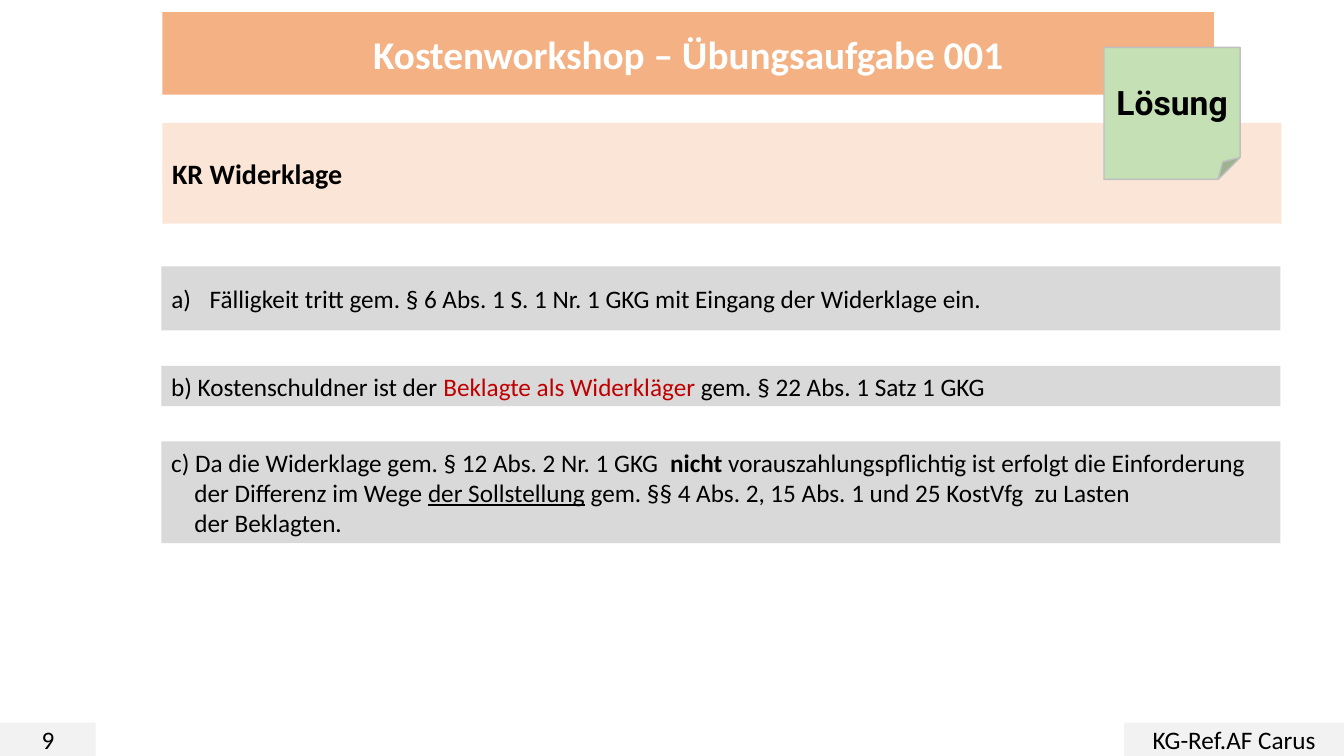
import pptx
import pptx.util
import pptx.dml.color
import pptx.enum.shapes
import pptx.enum.text
import pptx.oxml
import pptx.oxml.ns

Inches = pptx.util.Inches
RGBColor = pptx.dml.color.RGBColor
Shape = pptx.enum.shapes.MSO_SHAPE
Align = pptx.enum.text.PP_ALIGN
Anchor = pptx.enum.text.MSO_ANCHOR
AutoSize = pptx.enum.text.MSO_AUTO_SIZE

BLACK = RGBColor(0x00, 0x00, 0x00)
WHITE = RGBColor(0xFF, 0xFF, 0xFF)
RED = RGBColor(0xC0, 0x00, 0x00)
ORANGE = RGBColor(0xF4, 0xB1, 0x83)
PEACH = RGBColor(0xFB, 0xE5, 0xD6)
GREEN = RGBColor(0xC5, 0xE0, 0xB4)
GREY = RGBColor(0xD9, 0xD9, 0xD9)
PALE_GREY = RGBColor(0xF2, 0xF2, 0xF2)
LINE_GREY = RGBColor(0xBF, 0xBF, 0xBF)


def drawing_element(tag, **attributes):
    element = pptx.oxml.parse_xml(f"<a:{tag} {pptx.oxml.ns.nsdecls('a')}/>")
    for name, value in attributes.items():
        element.set(name, str(value))
    return element


class SlideBuilder:
    """Holds the text style and the slide being filled."""

    style = {"name": "Calibri", "size": 18, "bold": False, "color": BLACK}

    def __init__(self, slide):
        self.slide = slide

    def fill_text(self, box, paragraphs, align=Align.LEFT, grow=False, **formats):
        """Each paragraph is a list of (text, format changes) spans."""
        frame = box.text_frame
        settings = {
            "word_wrap": True,
            "vertical_anchor": Anchor.MIDDLE,
            "auto_size": AutoSize.SHAPE_TO_FIT_TEXT if grow else AutoSize.NONE,
        }
        for name, value in settings.items():
            setattr(frame, name, value)
        for index, spans in enumerate(paragraphs):
            para = frame.add_paragraph() if index else frame.paragraphs[0]
            para.alignment = align
            para.space_before = pptx.util.Pt(0)
            for text, changes in spans:
                span = para.add_run()
                span.text = text
                values = {**self.style, **formats, **changes}
                span.font.color.rgb = values.pop("color")
                values["size"] = pptx.util.Pt(values["size"])
                for name, value in values.items():
                    setattr(span.font, name, value)

    def place(self, holder, bounds, fill):
        for name, value in zip(("left", "top", "width", "height"), bounds):
            setattr(holder, name, Inches(value))
        holder.fill.solid()
        holder.fill.fore_color.rgb = fill

    def title(self, bounds, fill, text, **formats):
        holder = self.slide.shapes.title
        self.place(holder, bounds, fill)
        outline = drawing_element("prstGeom", prst="roundRect")
        outline.append(drawing_element("avLst"))
        holder.element.spPr.insert(1, outline)
        self.fill_text(holder, [[(text, {})]], Align.CENTER, **formats)

    def numbered_list(self, bounds, fill, paragraphs, indent):
        holder = self.slide.placeholders[1]
        self.place(holder, bounds, fill)
        self.fill_text(holder, paragraphs, grow=True)
        for para in holder.text_frame.paragraphs:
            self.indent(para, indent, -indent)
            para._p.get_or_add_pPr().append(
                drawing_element("buAutoNum", type="alphaLcParenR"))

    def indent(self, para, margin, first_line):
        properties = para._p.get_or_add_pPr()
        properties.set("marL", str(Inches(margin)))
        properties.set("indent", str(Inches(first_line)))

    def box(self, bounds, fill, paragraphs, kind=Shape.RECTANGLE, line=None, **formats):
        box = self.slide.shapes.add_shape(kind, *map(Inches, bounds))
        box.shadow.inherit = False
        self.place(box, bounds, fill)
        if line is None:
            box.line.fill.background()
        else:
            box.line.color.rgb = line
            box.line.width = pptx.util.Pt(1)
        self.fill_text(box, paragraphs, **formats)
        return box


def main():
    deck = pptx.Presentation()
    deck.slide_width, deck.slide_height = Inches(13.33), Inches(7.5)
    page = SlideBuilder(deck.slides.add_slide(deck.slide_layouts[1]))
    left, width = 1.6, 11.1

    # Heading, topic and sticky note
    page.title((1.61, 0.12, 10.43, 0.82), ORANGE, "Kostenworkshop – Übungsaufgabe 001",
               size=28, bold=True, color=WHITE)
    page.box((1.61, 1.22, width, 1), PEACH, [[("KR Widerklage", {})]], size=20, bold=True)
    page.box((10.95, 0.47, 1.35, 1.31), GREEN, [[("Lösung", {})]], Shape.FOLDED_CORNER,
             LINE_GREY, align=Align.CENTER, name="Roboto", size=24, bold=True)

    # Answers
    page.numbered_list((left, 2.76, width, 0.4), GREY, [[
        ("Fälligkeit tritt gem. § 6 Abs. 1 S. 1 Nr. 1 GKG mit Eingang der Widerklage ein.", {}),
    ]], indent=0.38)
    page.box((left, 3.63, width, 0.4), GREY, [[
        ("b) Kostenschuldner ist der ", {}),
        ("Beklagte als Widerkläger ", {"color": RED}),
        ("gem. § 22 Abs. 1 Satz 1 GKG", {}),
    ]], grow=True)
    collection = page.box((left, 4.38, width, 1.01), GREY, [
        [("c) Da die Widerklage gem. § 12 Abs. 2 Nr. 1 GKG  ", {}),
         ("nicht", {"bold": True}),
         (" vorauszahlungspflichtig ist erfolgt die Einforderung", {})],
        [("der Differenz im Wege ", {}),
         ("der Sollstellung", {"underline": True}),
         (" gem. §§ 4 Abs. 2, 15 Abs. 1 und 25 KostVfg  zu Lasten", {})],
        [("der Beklagten.", {})],
    ], grow=True)
    for para in collection.text_frame.paragraphs[1:]:
        page.indent(para, 0.23, 0)

    # Footer
    for x, footer_width, text in ((0, 0.95, "9"), (11.15, 2.18, "KG-Ref.AF Carus")):
        page.box((x, 7.17, footer_width, 0.33), PALE_GREY, [[(text, {})]], align=Align.CENTER)

    deck.save("out.pptx")


if __name__ == "__main__":
    main()
